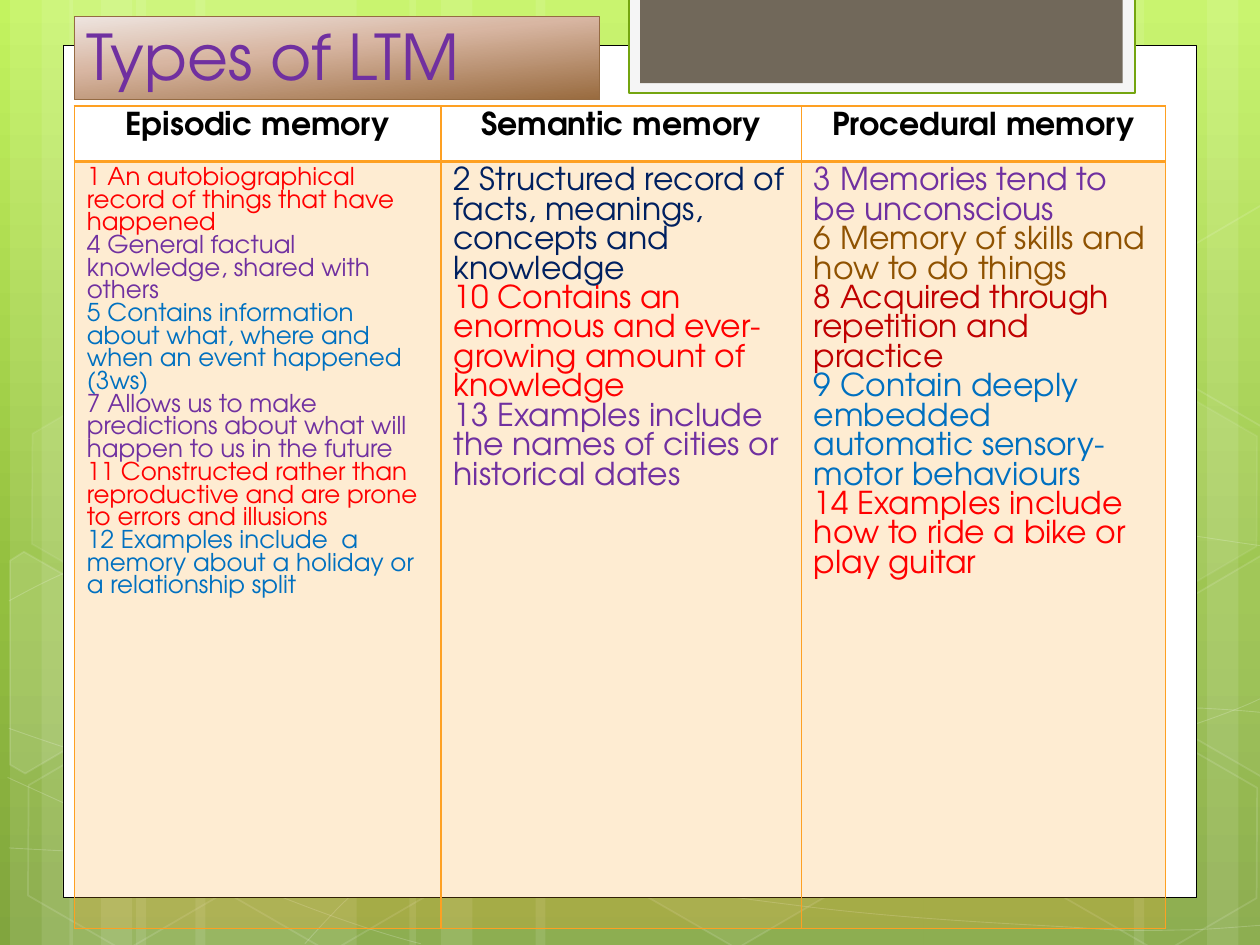
from lxml.etree import SubElement
from pptx import Presentation
from pptx.dml.color import RGBColor
from pptx.enum.shapes import MSO_SHAPE
from pptx.enum.text import MSO_ANCHOR, MSO_AUTO_SIZE, PP_ALIGN
from pptx.oxml.ns import qn
from pptx.util import Inches, Pt

THEME = dict(
    font="TeX Gyre Adventor", title_size=36, head_size=18,
    white="FFFFFF", black="000000", paper="F5F5F5", taupe="71685A",
    green="74A510", brown="956B43", orange="FEA022",
    red="FF0000", purple="7030A0", blue="0070C0", navy="002060",
    umber="8F5201", crimson="C00000",
    sky=[(0, "C3F35F"), (62, "93BF3F"), (100, "81A53E")],
    copper=[(0, "EEE5E0"), (40, "D8B6A2"), (100, "996B3F")],
)

# Content: heading, column width, text size, (text, colour) points
TITLE = "Types of LTM"
COLUMNS = [
    ("Episodic memory", 2.91, 14, [
        ("1 An autobiographical record of things that have happened", "red"),
        ("4 General factual knowledge, shared with others", "purple"),
        ("5 Contains information about what, where and when an event happened (3ws)", "blue"),
        ("7 Allows us to make predictions about what will happen to us in the future", "purple"),
        ("11 Constructed rather than reproductive and are prone to errors and illusions", "red"),
        ("12 Examples include  a memory about a holiday or a relationship split", "blue"),
    ]),
    ("Semantic memory", 2.86, 18, [
        ("2 Structured record of facts, meanings, concepts and knowledge", "navy"),
        ("10 Contains an enormous and ever-growing amount of knowledge", "red"),
        ("13 Examples include the names of cities or historical dates", "purple"),
    ]),
    ("Procedural memory", 2.89, 18, [
        ("3 Memories tend to be unconscious", "purple"),
        ("6 Memory of skills and how to do things", "umber"),
        ("8 Acquired through repetition and practice", "crimson"),
        ("9 Contain deeply embedded automatic sensory-motor behaviours", "blue"),
        ("14 Examples include how to ride a bike or play guitar", "red"),
    ]),
]
ROWS = [0.44, 6.09]

# Backdrop: stripes (left, width), waves (start, then Bezier triples)
STRIPES = [(1.08, 1.75), (0.08, 0.5), (0.33, 0.83), (1.55, 1.75), (0.55, 0.5), (0.8, 0.83),
           (7.33, 1.75), (9.58, 0.5), (9, 0.83), (4.25, 3.08), (3.25, 0.5), (3.5, 0.83)]
WAVES = [
    [(0.07, 6.73), (0.61, 6.76), (1.15, 6.79), (1.9, 6.78), (2.65, 6.77), (3.58, 6.75),
     (4.58, 6.65), (5.58, 6.55), (7, 6.36), (7.92, 6.17), (8.83, 5.98), (9.77, 5.68), (10.07, 5.51)],
    [(0.07, 4.77), (0.36, 4.61), (0.65, 4.46), (1.21, 4.31), (1.78, 4.16), (2.59, 3.94),
     (3.47, 3.87), (4.36, 3.8), (5.44, 3.79), (6.54, 3.87), (7.64, 3.95), (9.47, 4.26), (10.07, 4.34)],
    [(0.06, 6.17), (1.27, 6.72), (2.47, 7.27), (3.34, 7.49)],
    [(0.07, 5.78), (0.38, 5.89), (0.7, 6), (1.28, 6.16), (1.86, 6.31), (2.73, 6.56),
     (3.57, 6.73), (4.4, 6.9), (5.45, 7.08), (6.28, 7.18), (7.11, 7.29), (8, 7.33),
     (8.53, 7.36), (9.05, 7.4), (9.19, 7.38), (9.45, 7.38), (9.71, 7.37), (9.89, 7.35), (10.07, 7.34)],
    [(2.42, 7.49), (2.6, 7.29), (2.78, 7.09), (3.02, 6.91), (3.26, 6.73), (3.6, 6.53),
     (3.88, 6.39), (4.16, 6.25), (4.33, 6.19), (4.7, 6.09), (5.06, 5.99), (5.73, 5.85),
     (6.08, 5.78), (6.44, 5.71), (6.49, 5.71), (6.8, 5.69), (7.11, 5.66), (7.6, 5.63),
     (7.94, 5.62), (8.29, 5.61), (8.86, 5.62), (8.86, 5.62), (9.1, 5.62), (9.3, 5.62),
     (9.53, 5.62), (9.71, 5.63), (9.88, 5.64), (10.06, 5.66)],
]
# Hexagons: left, top, fill opacity, line opacity
HEXAGONS = [(3.34, 0.36, 4, 8), (4.97, 5.89, 6, 12), (0.11, 5.91, 0, 12), (0.14, 3.12, 7, 8),
            (1.74, 5.92, 0, 12), (7.53, 4.53, 10, 12), (8.34, 5.93, 0, 12), (8.34, 3.14, 7, 8)]
# Hexagons cut by the slide edge: points, fill opacity
RIGHT_CUT = [(9.26, 4.85), (10.01, 4.41), (10.09, 4.46), (10.09, 6.13), (10.02, 6.17), (9.26, 5.73)]
CUT_HEXAGONS = [
    ([(0.08, 4.45), (0.19, 4.38), (0.96, 4.82), (0.95, 5.7), (0.2, 6.14), (0.08, 6.07)], 10),
    (RIGHT_CUT, 4),
    ([(x, y - 2.78) for x, y in RIGHT_CUT], 0),
]


def rgb(name):
    return RGBColor.from_string(THEME[name])


def paint(fill, root, color, opacity=100):
    """Solid fill; root is the element that holds the fill."""
    if not opacity:
        fill.background()
        return
    fill.solid()
    fill.fore_color.rgb = rgb(color)
    if opacity < 100:
        clr = root.find(qn("a:solidFill")).find(qn("a:srgbClr"))
        SubElement(clr, qn("a:alpha"), val=str(opacity * 1000))


def gradient(fill, root, stops, angle):
    fill.gradient()
    grad = next(root.iter(qn("a:gradFill")))
    gs_list = grad.find(qn("a:gsLst"))
    for gs in list(gs_list):
        gs_list.remove(gs)
    for pos, color in stops:
        gs = SubElement(gs_list, qn("a:gs"), pos=str(pos * 1000))
        SubElement(gs, qn("a:srgbClr"), val=color)
    grad.find(qn("a:lin")).set("ang", str(angle * 60000))


def style(sp, fill="white", opacity=100, line=None, width=1, line_opacity=100):
    sp.shadow.inherit = False
    paint(sp.fill, sp._element.spPr, fill, opacity)
    if line:
        sp.line.width = Pt(width)
        paint(sp.line.fill, sp.line._get_or_add_ln(), line, line_opacity)
    else:
        sp.line.fill.background()


def add_box(s, kind, *box, **look):
    sp = s.shapes.add_shape(kind, *map(Inches, box))
    style(sp, **look)
    return sp


def add_path(s, points, close, **look):
    """Outline through points in inches, held as thousandths."""
    points = [(round(x * 1000), round(y * 1000)) for x, y in points]
    fb = s.shapes.build_freeform(*points[0], scale=Inches(1) / 1000)
    fb.add_line_segments(points[1:], close=close)
    sp = fb.convert_to_shape()
    style(sp, **look)
    return sp


def curve(sp):
    """Turn each three line segments into one Bezier segment."""
    path = next(sp._element.iter(qn("a:path")))
    segments = path.findall(qn("a:lnTo"))
    for i in range(0, len(segments), 3):
        bezier = SubElement(path, qn("a:cubicBezTo"))
        for segment in segments[i:i + 3]:
            bezier.append(segment[0])
            path.remove(segment)


def write(p, text, size, color, bold=False, align=PP_ALIGN.LEFT):
    p.text, p.alignment = text, align
    p.font.name, p.font.size, p.font.bold = THEME["font"], Pt(size), bold
    p.font.color.rgb = rgb(color)


def add_borders(cell, widths):
    tc_pr = cell._tc.get_or_add_tcPr()
    for i, (side, width) in enumerate(widths.items()):
        ln = tc_pr.makeelement(qn("a:ln" + side), {"w": str(Pt(width))})
        SubElement(SubElement(ln, qn("a:solidFill")), qn("a:srgbClr"), val=THEME["orange"])
        tc_pr.insert(i, ln)


prs = Presentation()
prs.slide_width, prs.slide_height = Inches(10), Inches(7.5)
s = prs.slides.add_slide(prs.slide_layouts[5])

# Backdrop
gradient(s.background.fill, s._element, THEME["sky"], 90)
for left, width in STRIPES:
    add_box(s, MSO_SHAPE.RECTANGLE, left, 0, width, 7.5, opacity=10)
for wave in WAVES:
    curve(add_path(s, wave, False, opacity=0, line="white", width=0.5, line_opacity=20))
for left, top, opacity, line_opacity in HEXAGONS:
    sp = add_box(s, MSO_SHAPE.HEXAGON, left, top, 1.75, 1.52,
                 opacity=opacity, line="white", line_opacity=line_opacity)
    sp.adjustments[0] = 0.285
    sp.rotation = 30
for points, opacity in CUT_HEXAGONS:
    add_path(s, points, True, opacity=opacity, line="white", line_opacity=12)

# Page and tab
add_box(s, MSO_SHAPE.RECTANGLE, 0.5, 0.36, 9, 6.76, line="black", width=0.5)
add_box(s, MSO_SHAPE.RECTANGLE, 4.99, -0.02, 4.02, 0.76, fill="paper", line="green", width=1.25)
add_box(s, MSO_SHAPE.RECTANGLE, 5.08, -0.02, 3.83, 0.68, fill="taupe")

# Title, brought in front of the page
title = s.shapes.title
title.left, title.top, title.width, title.height = map(Inches, (0.59, 0.13, 4.17, 0.66))
gradient(title.fill, title._element.spPr, THEME["copper"], 84)
title.line.color.rgb, title.line.width = rgb("brown"), Pt(0.75)
tf = title.text_frame
tf.auto_size, tf.vertical_anchor, tf.word_wrap = MSO_AUTO_SIZE.NONE, MSO_ANCHOR.BOTTOM, True
write(tf.paragraphs[0], TITLE, THEME["title_size"], "purple")
s.shapes._spTree.append(title._element)

# Table
table = s.shapes.add_table(2, len(COLUMNS), Inches(0.59), Inches(0.84),
                           Inches(sum(c[1] for c in COLUMNS)), Inches(sum(ROWS))).table
table.horz_banding = False
for row, height in zip(table.rows, ROWS):
    row.height = Inches(height)
for i, (heading, width, size, points) in enumerate(COLUMNS):
    table.columns[i].width = Inches(width)
    head, body = table.cell(0, i), table.cell(1, i)
    head.fill.background()
    write(head.text_frame.paragraphs[0], heading, THEME["head_size"], "black", True, PP_ALIGN.CENTER)
    add_borders(head, dict(L=1, R=1, T=1, B=2))
    paint(body.fill, body._tc.get_or_add_tcPr(), "orange", 20)
    add_borders(body, dict(L=1, R=1, T=2, B=1))
    tf = body.text_frame
    for k, (text, color) in enumerate(points):
        write(tf.add_paragraph() if k else tf.paragraphs[0], text, size, color)

prs.save("out.pptx")
